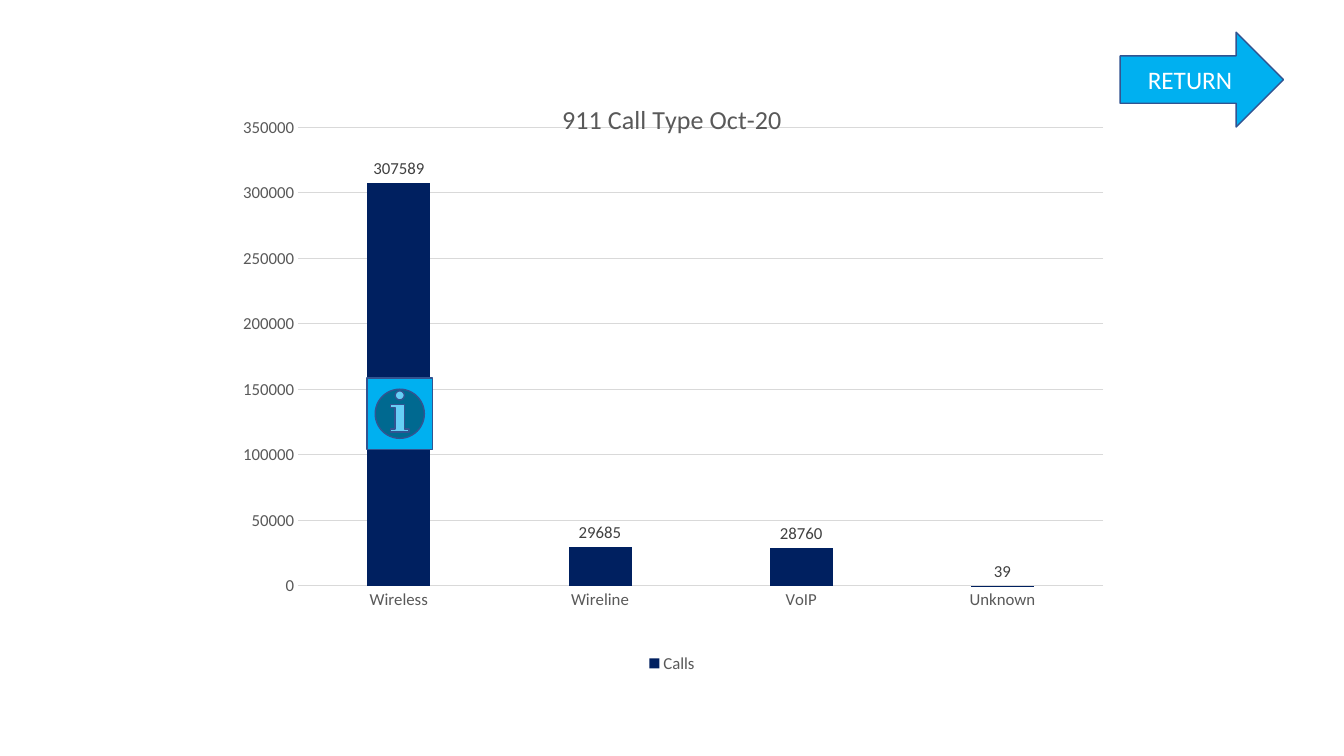
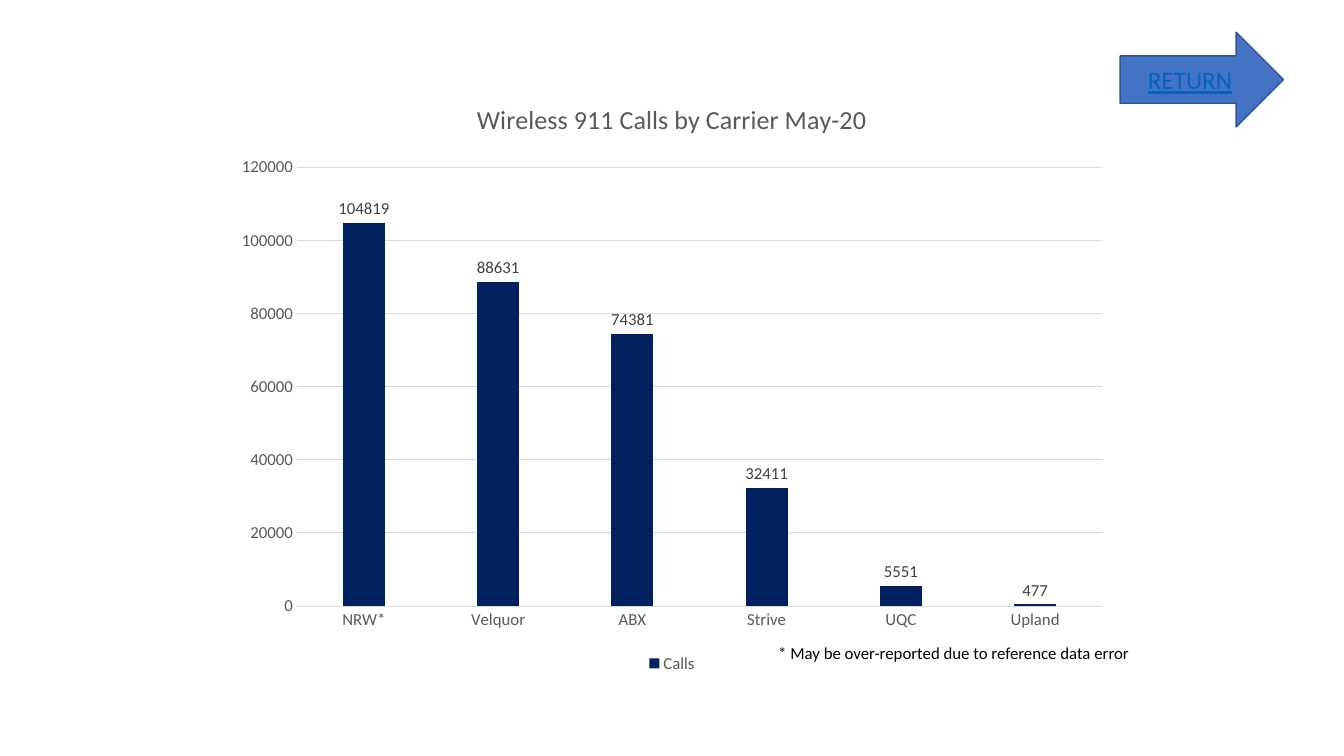
import pptx
import pptx.chart.data
import pptx.dml.color
import pptx.enum.chart
import pptx.enum.shapes
import pptx.enum.text
import pptx.oxml
import pptx.oxml.ns
import pptx.util
from dataclasses import dataclass

Inches = pptx.util.Inches
Pt = pptx.util.Pt
MSO_SHAPE = pptx.enum.shapes.MSO_SHAPE
PP_ALIGN = pptx.enum.text.PP_ALIGN
XL = pptx.enum.chart


@dataclass(frozen=True)
class Theme:
    font: str = "Calibri"
    bar: str = "002060"
    bright: str = "00B0F0"
    blue: str = "4472C4"
    outline: str = "325491"
    link: str = "0563C1"
    white: str = "FFFFFF"
    black: str = "000000"
    label: str = "404040"
    chart_text: str = "595959"
    grid: str = "D9D9D9"
    title_size: float = 18.6
    button_size: float = 18
    text_size: float = 12


theme = Theme()
rgb = pptx.dml.color.RGBColor.from_string


def set_font(font, size, color):
    font.name = theme.font
    font.size = Pt(size)
    font.bold = False
    font.color.rgb = rgb(color)


def add_button(slide, preset, left, top, width, height, fill):
    shape = slide.shapes.add_shape(
        preset, Inches(left), Inches(top), Inches(width), Inches(height))
    shape.shadow.inherit = False
    shape.fill.solid()
    shape.fill.fore_color.rgb = rgb(fill)
    shape.line.color.rgb = rgb(theme.outline)
    shape.line.width = Pt(1)
    return shape


# Content of the two slides
pages = [
    dict(title="911 Call Type Oct-20",
         calls={"Wireless": 307589, "Wireline": 29685, "VoIP": 28760, "Unknown": 39},
         plot=dict(x=0.083, y=0.08, w=0.898, h=0.767),
         info=True, arrow=theme.bright, arrow_text=theme.white, underline=False, note=None),
    dict(title="Wireless 911 Calls by Carrier May-20",
         calls={"NRW*": 104819, "Velquor": 88631, "ABX": 74381,
                "Strive": 32411, "UQC": 5551, "Upland": 477},
         plot=None,
         info=False, arrow=theme.blue, arrow_text=theme.link, underline=True,
         note="* May be over-reported due to reference data error"),
]

presentation = pptx.Presentation()
presentation.slide_width = Inches(13.33)
presentation.slide_height = Inches(7.5)

for page in pages:
    slide = presentation.slides.add_slide(presentation.slide_layouts[6])

    # Column chart
    data = pptx.chart.data.CategoryChartData()
    data.categories = list(page["calls"])
    data.add_series("Calls", list(page["calls"].values()))
    chart = slide.shapes.add_chart(
        XL.XL_CHART_TYPE.COLUMN_CLUSTERED, Inches(2.22), Inches(0.79),
        Inches(8.89), Inches(5.93), data).chart
    set_font(chart.font, theme.text_size, theme.chart_text)

    chart.has_title = True
    chart.chart_title.include_in_layout = False
    title = chart.chart_title.text_frame
    title.text = page["title"]
    set_font(title.paragraphs[0].font, theme.title_size, theme.chart_text)

    chart.has_legend = True
    chart.legend.position = XL.XL_LEGEND_POSITION.BOTTOM
    chart.legend.include_in_layout = False

    # Axes and gridlines
    for axis in (chart.category_axis, chart.value_axis):
        axis.major_tick_mark = XL.XL_TICK_MARK.NONE
        axis.minor_tick_mark = XL.XL_TICK_MARK.NONE
    chart.value_axis.format.line.fill.background()
    chart.value_axis.has_major_gridlines = True
    for line in (chart.category_axis.format.line,
                 chart.value_axis.major_gridlines.format.line):
        line.color.rgb = rgb(theme.grid)
        line.width = Pt(0.75)

    # Columns and their values
    plot = chart.plots[0]
    plot.gap_width = 219
    plot.overlap = -27
    plot.vary_by_categories = False
    series = plot.series[0]
    series.format.fill.solid()
    series.format.fill.fore_color.rgb = rgb(theme.bar)
    labels = series.data_labels
    labels.show_value = True
    labels.position = XL.XL_LABEL_POSITION.OUTSIDE_END
    set_font(labels.font, theme.text_size, theme.label)

    # Fixed plot area, as fractions of the chart
    if page["plot"]:
        plot_area = chart.element.find(".//" + pptx.oxml.ns.qn("c:plotArea"))
        for layout in plot_area.findall(pptx.oxml.ns.qn("c:layout")):
            plot_area.remove(layout)
        sizes = "".join(f'<c:{key} val="{value}"/>' for key, value in page["plot"].items())
        plot_area.insert(0, pptx.oxml.parse_xml(
            f'<c:layout {pptx.oxml.ns.nsdecls("c")}><c:manualLayout>'
            '<c:layoutTarget val="inner"/><c:xMode val="edge"/><c:yMode val="edge"/>'
            f'{sizes}</c:manualLayout></c:layout>'))

    # Information button on the first column
    if page["info"]:
        add_button(slide, MSO_SHAPE.ACTION_BUTTON_INFORMATION,
                   3.64, 3.75, 0.65, 0.71, theme.bright)

    # Return arrow
    arrow = add_button(slide, MSO_SHAPE.RIGHT_ARROW, 11.11, 0.32, 1.62, 0.94, page["arrow"])
    arrow.text_frame.text = "RETURN"
    arrow.text_frame.vertical_anchor = pptx.enum.text.MSO_ANCHOR.MIDDLE
    paragraph = arrow.text_frame.paragraphs[0]
    paragraph.alignment = PP_ALIGN.CENTER
    set_font(paragraph.font, theme.button_size, page["arrow_text"])
    paragraph.font.underline = page["underline"]

    # Footnote
    if page["note"]:
        note = slide.shapes.add_textbox(Inches(7.62), Inches(6.33), Inches(4.53), Inches(0.3))
        note.text_frame.word_wrap = True
        note.text_frame.auto_size = pptx.enum.text.MSO_AUTO_SIZE.SHAPE_TO_FIT_TEXT
        note.text_frame.text = page["note"]
        set_font(note.text_frame.paragraphs[0].font, theme.text_size, theme.black)

presentation.save("out.pptx")
